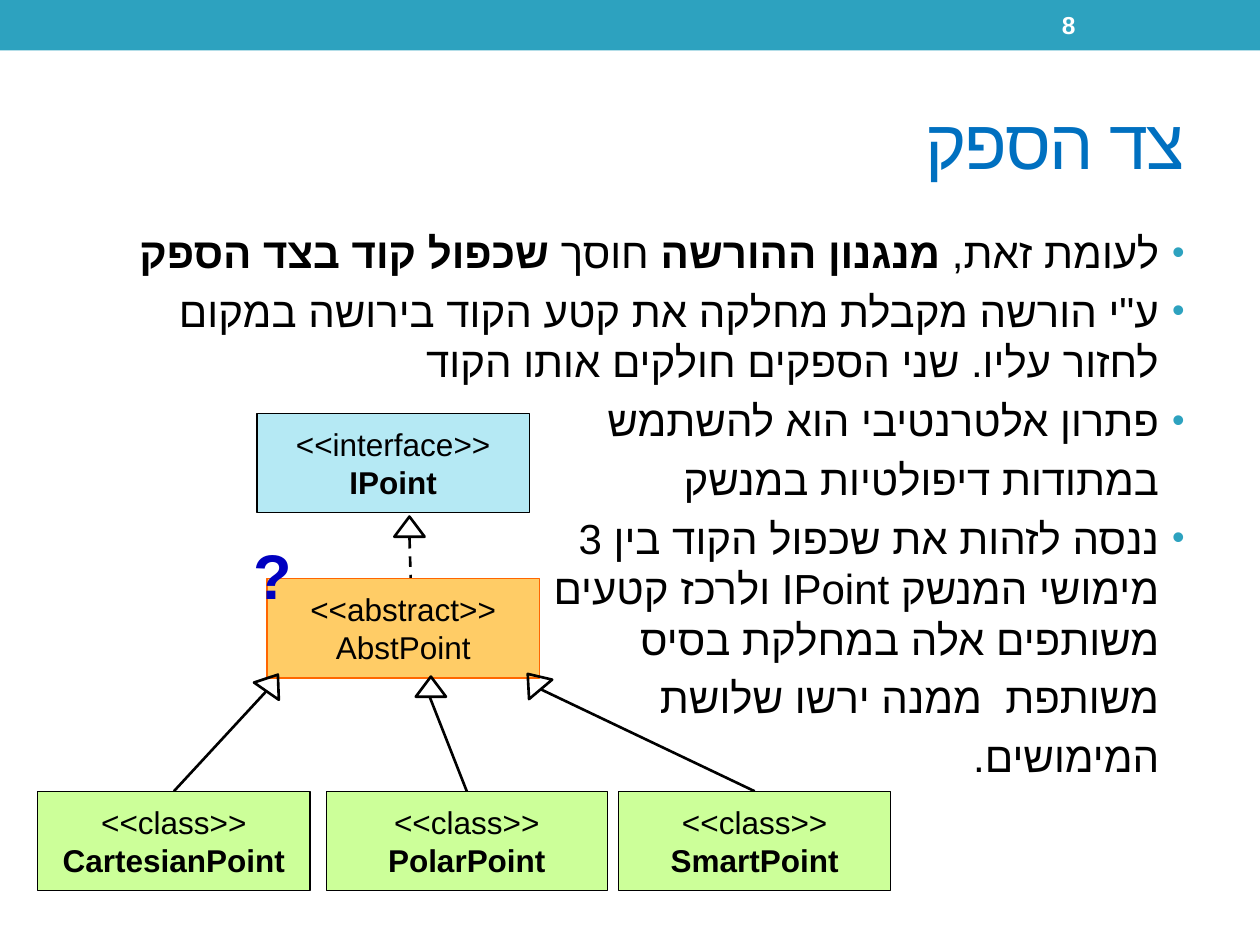
from lxml import etree
from pptx import Presentation
from pptx import util as u
from pptx.dml.color import RGBColor
from pptx.enum import dml, shapes, text
from pptx.oxml.ns import qn

TEAL = RGBColor(0x2D, 0xA2, 0xBF)
BLUE = RGBColor(0x00, 0x70, 0xC0)
NAVY = RGBColor(0x00, 0x00, 0xC0)
SKY = RGBColor(0xB5, 0xE9, 0xF4)
AMBER = RGBColor(0xFF, 0xCC, 0x66)
ORANGE = RGBColor(0xFF, 0x66, 0x00)
LIME = RGBColor(0xCC, 0xFF, 0x99)
BLACK = RGBColor(0, 0, 0)
WHITE = RGBColor(255, 255, 255)
LEFT, CENTER, RIGHT = text.PP_ALIGN.LEFT, text.PP_ALIGN.CENTER, text.PP_ALIGN.RIGHT
MIDDLE = text.MSO_ANCHOR.MIDDLE
SHAPE = shapes.MSO_SHAPE

prs = Presentation()
prs.slide_width, prs.slide_height = u.Inches(10), u.Inches(7.5)
COL, ROW = prs.slide_width / 10, prs.slide_height / 7.5
s = prs.slides.add_slide(prs.slide_layouts[6])


def grid(x, y, w, h):
    """Turn columns and rows into slide lengths."""
    return int(x * COL), int(y * ROW), int(w * COL), int(h * ROW)


def add_rtl(p, runs, align, size, color):
    """Fill a right-to-left paragraph with (words, bold) runs; a newline breaks the line."""
    p.alignment = align
    p._p.get_or_add_pPr().set("rtl", "1")
    for words, bold in runs:
        for i, line in enumerate(words.split("\n")):
            if i:
                p.add_line_break()
            r = p.add_run()
            r.text = line
            for name, value in dict(name="Arial", size=u.Pt(size), bold=bold).items():
                setattr(r.font, name, value)
            r.font.color.rgb = color
            etree.SubElement(r._r.get_or_add_rPr(), qn("a:cs"), typeface="Arial")


# Top band
band = s.shapes.add_shape(SHAPE.RECTANGLE, *grid(0, 0, 10, 0.4))
band.shadow.inherit = False
band.fill.solid()
band.fill.fore_color.rgb = TEAL
band.line.fill.background()

# Title and page number
for area, words, align, size, color, bold in [
    ((0.5, 0.58, 9, 1.08), "צד הספק", RIGHT, 40, BLUE, False),
    ((8.33, 0.02, 1.17, 0.36), "8", LEFT, 14, WHITE, True),
]:
    tf = s.shapes.add_textbox(*grid(*area)).text_frame
    tf.word_wrap, tf.vertical_anchor = True, MIDDLE
    add_rtl(tf.paragraphs[0], [(words, bold)], align, size, color)
    if size == 40:
        tf.paragraphs[0].runs[0]._r.rPr.set("spc", "-100")

# Body: (bulleted, runs)
body = [
    (True, [("לעומת זאת, ", False), ("מנגנון ההורשה", True), (" חוסך ", False),
            ("שכפול קוד בצד הספק", True)]),
    (True, [("ע\"י הורשה מקבלת מחלקה את קטע הקוד בירושה במקום לחזור עליו. "
             "שני הספקים חולקים אותו הקוד", False)]),
    (True, [("פתרון אלטרנטיבי הוא להשתמש", False)]),
    (False, [("במתודות דיפולטיות במנשק", False)]),
    (True, [("ננסה לזהות את שכפול הקוד בין 3\nמימושי המנשק IPoint ולרכז קטעים\n"
             "משותפים אלה במחלקת בסיס", False)]),
    (False, [("משותפת  ממנה ירשו שלושת", False)]),
    (False, [("המימושים.", False)]),
]
tf = s.shapes.add_textbox(*grid(0.5, 1.75, 9, 5.33)).text_frame
tf.word_wrap = True
for i, (bulleted, runs) in enumerate(body):
    p = tf.add_paragraph() if i else tf.paragraphs[0]
    add_rtl(p, runs, RIGHT, 24, BLACK)
    p.space_before = u.Pt(24 * 0.2)
    pPr = p._p.get_or_add_pPr()
    pPr.set("marL", str(int(0.2 * COL)))
    pPr.set("indent", str(int(-0.2 * COL) if bulleted else 0))
    if bulleted:
        clr = etree.SubElement(pPr, qn("a:buClr"))
        etree.SubElement(clr, qn("a:srgbClr"), val=str(TEAL))
        etree.SubElement(pPr, qn("a:buSzPct"), val="85000")
        etree.SubElement(pPr, qn("a:buFont"), typeface="Arial")
        etree.SubElement(pPr, qn("a:buChar"), char="•")
    else:
        etree.SubElement(pPr, qn("a:buNone"))

# Class diagram lines; the first lies behind the boxes
lines = []
for x1, y1, x2, y2 in [(3.25, 4.27, 3.26, 4.61), (1.38, 6.28, 2.11, 5.49),
                       (3.7, 6.28, 3.41, 5.53), (5.99, 6.28, 4.29, 5.47)]:
    cx = s.shapes.add_connector(shapes.MSO_CONNECTOR.STRAIGHT, *grid(x1, y1, x2, y2))
    cx.line.color.rgb, cx.line.width = BLACK, u.Pt(1.5)
    etree.SubElement(cx._element.spPr, qn("a:effectLst"))
    lines.append(cx)
lines[0].line.dash_style = dml.MSO_LINE.DASH

# Class diagram boxes
boxes = {}
for x, y, w, kind, name, bold, fill, edge in [
    (2.04, 3.28, 2.16, "interface", "IPoint", True, SKY, BLACK),
    (2.12, 4.59, 2.16, "abstract", "AbstPoint", False, AMBER, ORANGE),
    (0.3, 6.28, 2.16, "class", "CartesianPoint", True, LIME, BLACK),
    (2.59, 6.28, 2.23, "class", "PolarPoint", True, LIME, BLACK),
    (4.91, 6.28, 2.16, "class", "SmartPoint", True, LIME, BLACK),
]:
    sp = s.shapes.add_shape(SHAPE.FLOWCHART_PROCESS, *grid(x, y, w, 0.79))
    sp.shadow.inherit = False
    sp.fill.solid()
    sp.fill.fore_color.rgb = fill
    sp.line.color.rgb, sp.line.width = edge, u.Pt(0.75)
    tf = sp.text_frame
    tf.word_wrap, tf.vertical_anchor = False, MIDDLE
    add_rtl(tf.paragraphs[0], [(f"<<{kind}>>", False)], CENTER, 18, BLACK)
    add_rtl(tf.add_paragraph(), [(name, bold)], CENTER, 18, BLACK)
    boxes[name] = sp

for cx, name in zip(lines[1:], ["CartesianPoint", "PolarPoint", "SmartPoint"]):
    cx.begin_connect(boxes[name], 0)

# Hollow inheritance triangles
for x, y, angle in [(3.13, 4.1, 0), (2.04, 5.34, 34.7), (3.3, 5.37, 0), (4.12, 5.33, 320)]:
    sp = s.shapes.add_shape(SHAPE.FLOWCHART_EXTRACT, *grid(x, y, 0.24, 0.16))
    sp.shadow.inherit = False
    sp.rotation = angle
    sp.fill.background()
    sp.line.color.rgb, sp.line.width = BLACK, u.Pt(1.5)

# Question mark
tf = s.shapes.add_textbox(*grid(1.91, 4.21, 0.51, 0.7)).text_frame
tf.word_wrap, tf.auto_size = False, text.MSO_AUTO_SIZE.SHAPE_TO_FIT_TEXT
add_rtl(tf.paragraphs[0], [("?", True)], CENTER, 36, NAVY)

prs.save("out.pptx")
